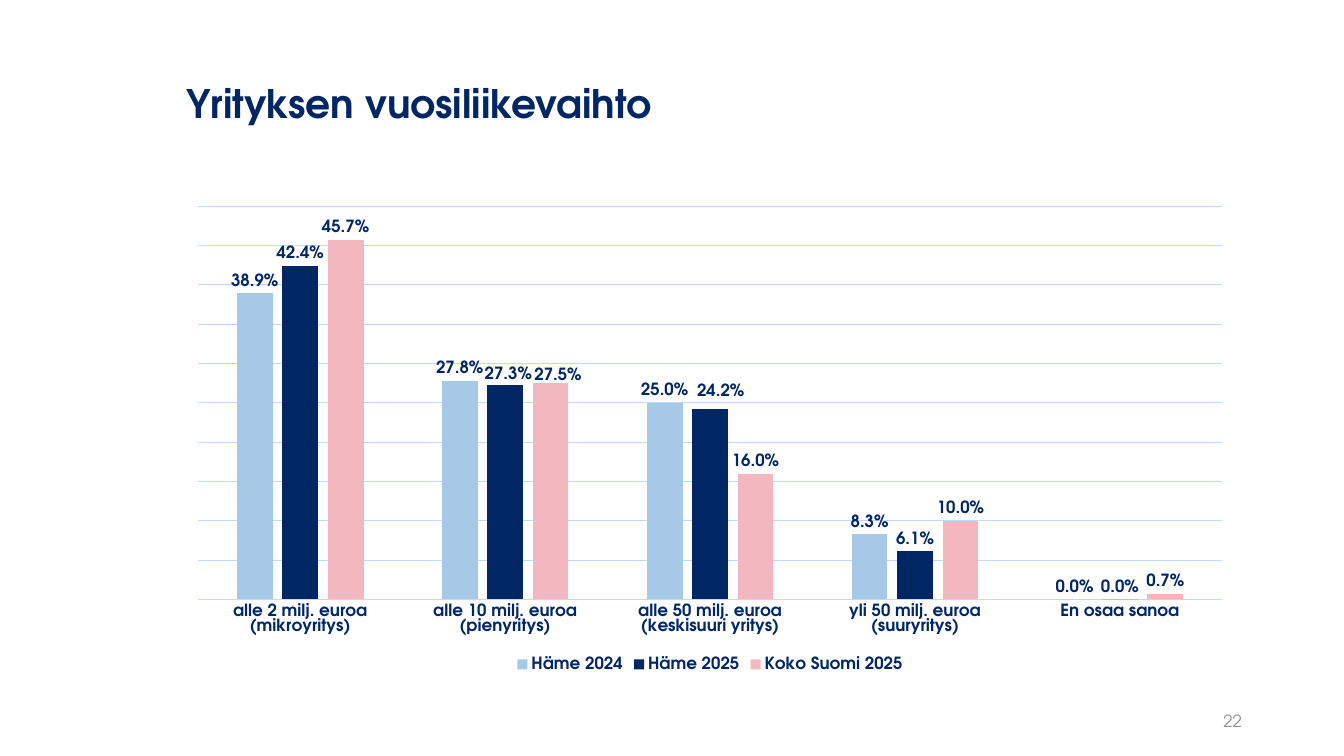
from lxml import etree
from pptx import Presentation
from pptx.chart.data import CategoryChartData
from pptx.dml.color import RGBColor
from pptx.enum.chart import XL_CHART_TYPE, XL_LABEL_POSITION, XL_LEGEND_POSITION, XL_TICK_MARK
from pptx.enum.text import MSO_ANCHOR, PP_ALIGN
from pptx.util import Pt

COLUMN = XL_CHART_TYPE.COLUMN_CLUSTERED
OUTER = XL_LABEL_POSITION.OUTSIDE_END
BOTTOM = XL_LEGEND_POSITION.BOTTOM
NO_TICK = XL_TICK_MARK.NONE
MIDDLE = MSO_ANCHOR.MIDDLE
LEFT, RIGHT = PP_ALIGN.LEFT, PP_ALIGN.RIGHT

FACE = "TeX Gyre Adventor"
FORM = "0.0%"
NS = "http://schemas.openxmlformats.org/drawingml/2006/chart"
HEX = {"navy": "002663", "sky": "A5C9E7", "rose": "F2B7BF", "grid": "C1D9FF", "grey": "8C8E9F"}

SIZE = (960, 540)
TEXTS = [
    ("Yrityksen vuosiliikevaihto", (126, 28.8, 762.5, 93.6), LEFT, 0.9,
     {"size": 28, "bold": True, "color": "navy"}),
    ("22", (678.2, 500.4, 216, 28.8), RIGHT, 1.0,
     {"size": 12, "bold": False, "color": "grey"}),
]
FRAME = (126, 140.4, 762.5, 342.7)
PLOT = {"x": 0.02, "y": 0.02, "w": 0.96, "h": 0.82}
CATS = [
    "alle 2 milj. euroa (mikroyritys)",
    "alle 10 milj. euroa (pienyritys)",
    "alle 50 milj. euroa (keskisuuri yritys)",
    "yli 50 milj. euroa (suuryritys)",
    "En osaa sanoa",
]
ROWS = [
    ("Häme 2024", "sky", (0.389, 0.278, 0.25, 0.083, 0), {}),
    ("Häme 2025", "navy", (0.424, 0.273, 0.242, 0.061, 0),
     {1: {"x": 0.003, "y": 0.004}, 2: {"x": 0.01, "y": -0.012}}),
    ("Koko Suomi 2025", "rose", (0.457, 0.275, 0.16, 0.1, 0.007),
     {1: {"x": 0.007, "y": 0.01}}),
]
LABEL = {"size": 12, "bold": True, "color": "navy"}
AXIS = {"minimum_scale": 0, "maximum_scale": 0.5, "major_unit": 0.05,
        "has_major_gridlines": True, "visible": False}
BASE = {"major_tick_mark": NO_TICK, "minor_tick_mark": NO_TICK, "has_major_gridlines": False}
MARKS = {"show_value": True, "number_format": FORM,
         "number_format_is_linked": False, "position": OUTER}


def assign(item, form):
    for key, val in form.items():
        setattr(item, key, val)


def tint(name):
    return RGBColor.from_string(HEX[name])


def style(font, form):
    assign(font, {"name": FACE, "size": Pt(form["size"]), "bold": form["bold"]})
    font.color.rgb = tint(form["color"])


def rule(line):
    line.color.rgb = tint("grid")
    line.width = Pt(0.75)


def place(node, spot, form):
    for old in node.findall(f"{{{NS}}}layout"):
        node.remove(old)
    lay = etree.Element(f"{{{NS}}}layout")
    man = etree.SubElement(lay, f"{{{NS}}}manualLayout")
    for key, val in form.items():
        etree.SubElement(man, f"{{{NS}}}{key}").set("val", str(val))
    node.insert(spot, lay)


def write(slide, text, box, align, space, form):
    frame = slide.shapes.add_textbox(*map(Pt, box)).text_frame
    assign(frame, {"word_wrap": True, "vertical_anchor": MIDDLE})
    para = frame.paragraphs[0]
    assign(para, {"text": text, "alignment": align, "line_spacing": space})
    style(para.runs[0].font, form)


def draw(slide):
    data = CategoryChartData(number_format=FORM)
    data.categories = CATS
    for name, _, vals, _ in ROWS:
        data.add_series(name, vals)
    chart = slide.shapes.add_chart(COLUMN, *map(Pt, FRAME), data).chart
    assign(chart, {"has_title": False, "has_legend": True})
    assign(chart.legend, {"position": BOTTOM, "include_in_layout": False})
    base, axis = chart.category_axis, chart.value_axis
    assign(base, BASE)
    assign(axis, AXIS)
    rule(base.format.line)
    rule(axis.major_gridlines.format.line)
    for font in (chart.font, chart.legend.font, base.tick_labels.font):
        style(font, LABEL)

    plot = chart.plots[0]
    assign(plot, {"gap_width": 219, "overlap": -27, "vary_by_categories": False})
    for bar, (_, color, _, moves) in zip(plot.series, ROWS):
        bar.format.fill.solid()
        bar.format.fill.fore_color.rgb = tint(color)
        marks = bar.data_labels
        assign(marks, MARKS)
        style(marks.font, LABEL)
        for num, move in moves.items():
            mark = bar.points[num].data_label
            style(mark.font, LABEL)
            mark.position = OUTER
        for node, move in zip(bar.data_labels._element.findall(f"{{{NS}}}dLbl"), moves.values()):
            place(node, 1, move)

    area = chart._chartSpace.find(f".//{{{NS}}}plotArea")
    place(area, 0, {"layoutTarget": "inner", "xMode": "edge", "yMode": "edge", **PLOT})


def main():
    deck = Presentation()
    deck.slide_width, deck.slide_height = map(Pt, SIZE)
    slide = deck.slides.add_slide(deck.slide_layouts[6])
    for item in TEXTS:
        write(slide, *item)
    draw(slide)
    deck.save("out.pptx")


if __name__ == "__main__":
    main()
